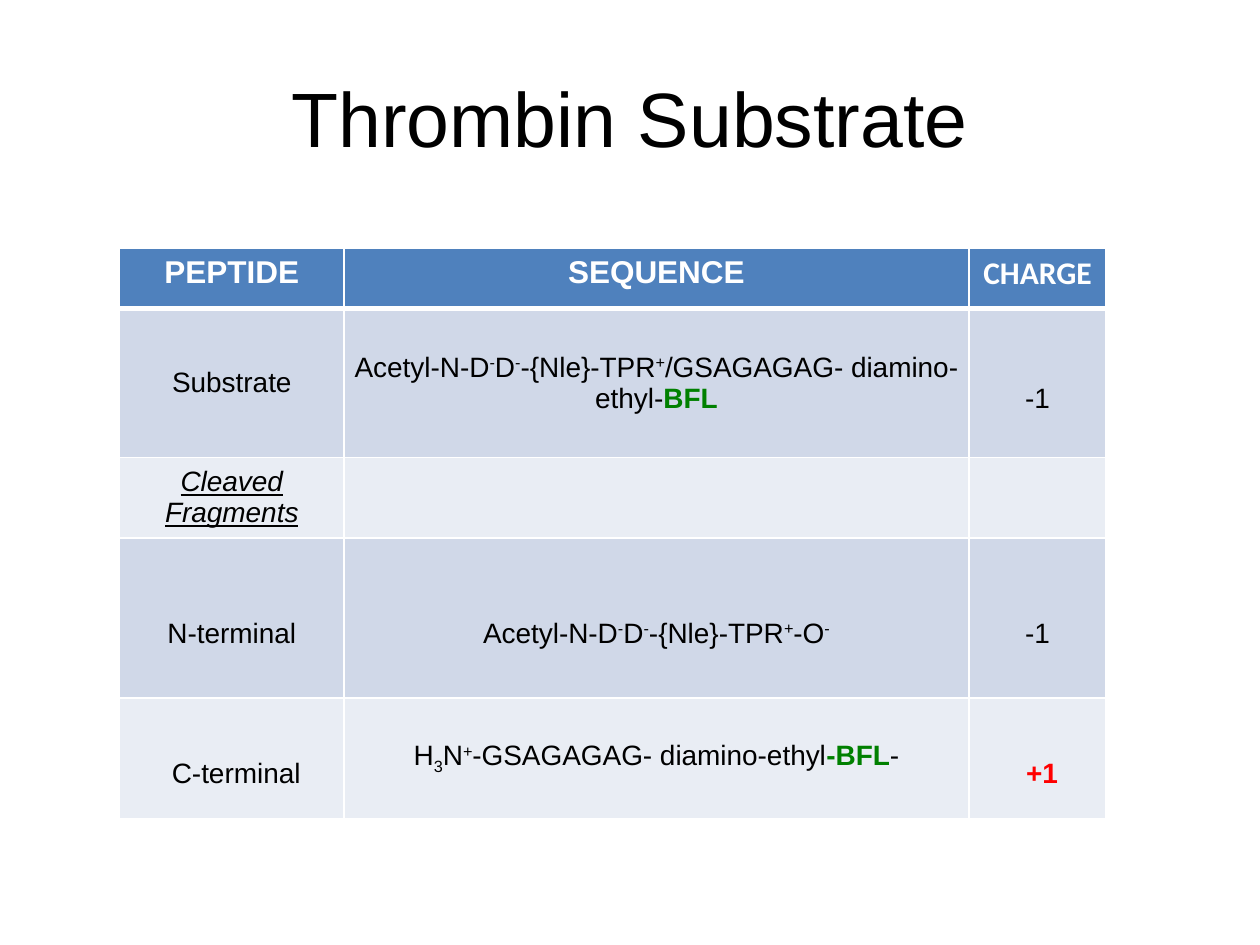
from dataclasses import dataclass

import pptx
import pptx.dml.color
import pptx.enum.text
import pptx.oxml
import pptx.oxml.ns
import pptx.util
from pptx.util import Inches

COLORS = {
    "header": "4F81BD",
    "band_dark": "D0D8E8",
    "band_light": "E9EDF4",
    "white": "FFFFFF",
    "black": "000000",
    "label": "008000",
    "positive": "FF0000",
}
COLUMN_WIDTHS = (1.78, 4.96, 1.09)
ROW_HEIGHTS = (0.48, 1.18, 0.64, 1.27, 0.96)


@dataclass(frozen=True)
class Span:
    text: str
    color: str = "black"
    size: int = 16
    font: str = "Arial"
    bold: bool = False
    emphasis: bool = False  # italic and underlined
    baseline: int = 0  # percent above or below the line


@dataclass(frozen=True)
class Entry:
    spans: tuple[Span, ...] = ()
    line_spacing: float = 1.0
    indent: float = 0.0


def header(text: str, font: str = "Arial") -> Entry:
    return Entry((Span(text, color="white", size=18, font=font, bold=True),))


def raised(text: str) -> Span:
    return Span(text, baseline=30)


def plain(text: str, line_spacing: float = 1.0, indent: float = 0.0, **style) -> Entry:
    return Entry((Span(text, **style),), line_spacing, indent)


N_TERMINUS = (
    Span("Acetyl-N-D"), raised("-"), Span("D"), raised("-"),
    Span("-{Nle}-TPR"), raised("+"),
)
SUBSTRATE = N_TERMINUS + (
    Span("/GSAGAGAG- diamino-ethyl-"),
    Span("BFL", color="label", bold=True),
)
C_FRAGMENT = (
    Span("H"), Span("3", baseline=-25), Span("N"), raised("+"),
    Span("-GSAGAGAG- diamino-ethyl"),
    Span("-BFL", color="label", bold=True), Span("-"),
)
ROWS = (
    (header("PEPTIDE"), header("SEQUENCE"), header("CHARGE", font="Calibri")),
    (plain("Substrate"), Entry(SUBSTRATE), plain("-1", 2.0)),
    (plain("Cleaved Fragments", emphasis=True), Entry(), Entry()),
    (
        plain("N-terminal", 2.0),
        Entry(N_TERMINUS + (Span("-O"), raised("-")), 2.0),
        plain("-1", 2.0),
    ),
    (
        plain("C-terminal", 2.0, 0.07),
        Entry(C_FRAGMENT),
        plain("+1", 2.0, 0.07, color="positive", bold=True),
    ),
)


def rgb(name: str) -> pptx.dml.color.RGBColor:
    return pptx.dml.color.RGBColor.from_string(COLORS[name])


def write_span(para, span: Span) -> None:
    run = para.add_run()
    run.text = span.text
    run.font.name = span.font
    run.font.size = pptx.util.Pt(span.size)
    run.font.bold = span.bold
    run.font.italic = span.emphasis
    run.font.underline = span.emphasis
    run.font.color.rgb = rgb(span.color)
    if span.baseline:
        run._r.get_or_add_rPr().set("baseline", str(span.baseline * 1000))


def write_entry(para, entry: Entry) -> None:
    para.alignment = pptx.enum.text.PP_ALIGN.CENTER
    para.line_spacing = entry.line_spacing
    if entry.indent:
        properties = para._p.get_or_add_pPr()
        properties.set("marL", str(Inches(entry.indent)))
        properties.set("indent", "0")
    for span in entry.spans:
        write_span(para, span)


def set_borders(cell, widths: dict[str, float]) -> None:
    """Draw white borders, with widths in points keyed by L, R, T and B."""
    properties = cell._tc.get_or_add_tcPr()
    for side, width in widths.items():
        properties.append(pptx.oxml.parse_xml(
            f'<a:ln{side} {pptx.oxml.ns.nsdecls("a")} w="{pptx.util.Pt(width)}">'
            f'<a:solidFill><a:srgbClr val="{COLORS["white"]}"/></a:solidFill>'
            f'</a:ln{side}>'
        ))


def format_cell(cell, row: int) -> None:
    widths = {"L": 1, "R": 1, "T": 3 if row == 1 else 1, "B": 3 if row == 0 else 1}
    set_borders(cell, widths)
    cell.fill.solid()
    if row == 0:
        cell.fill.fore_color.rgb = rgb("header")
        return
    cell.fill.fore_color.rgb = rgb("band_dark" if row % 2 else "band_light")
    cell.vertical_anchor = pptx.enum.text.MSO_ANCHOR.MIDDLE
    cell.margin_left = cell.margin_right = Inches(0.07)
    cell.margin_top = cell.margin_bottom = 0


def add_title(page, text: str) -> None:
    title = page.shapes.title
    title.left, title.top = Inches(0.5), Inches(0.3)
    title.width, title.height = Inches(9), Inches(1.25)
    title.text_frame.vertical_anchor = pptx.enum.text.MSO_ANCHOR.MIDDLE
    write_entry(title.text_frame.paragraphs[0], plain(text, size=44))


def add_peptide_table(page) -> None:
    table = page.shapes.add_table(
        len(ROWS), len(COLUMN_WIDTHS), Inches(0.95), Inches(1.97),
        Inches(sum(COLUMN_WIDTHS)), Inches(sum(ROW_HEIGHTS)),
    ).table
    for column, width in zip(table.columns, COLUMN_WIDTHS):
        column.width = Inches(width)
    for table_row, height in zip(table.rows, ROW_HEIGHTS):
        table_row.height = Inches(height)
    for row, entries in enumerate(ROWS):
        for column, entry in enumerate(entries):
            cell = table.cell(row, column)
            format_cell(cell, row)
            write_entry(cell.text_frame.paragraphs[0], entry)


def main() -> None:
    deck = pptx.Presentation()
    deck.slide_width, deck.slide_height = Inches(10), Inches(7.5)
    page = deck.slides.add_slide(deck.slide_layouts[5])
    add_title(page, "Thrombin Substrate")
    add_peptide_table(page)
    deck.save("out.pptx")


if __name__ == "__main__":
    main()
